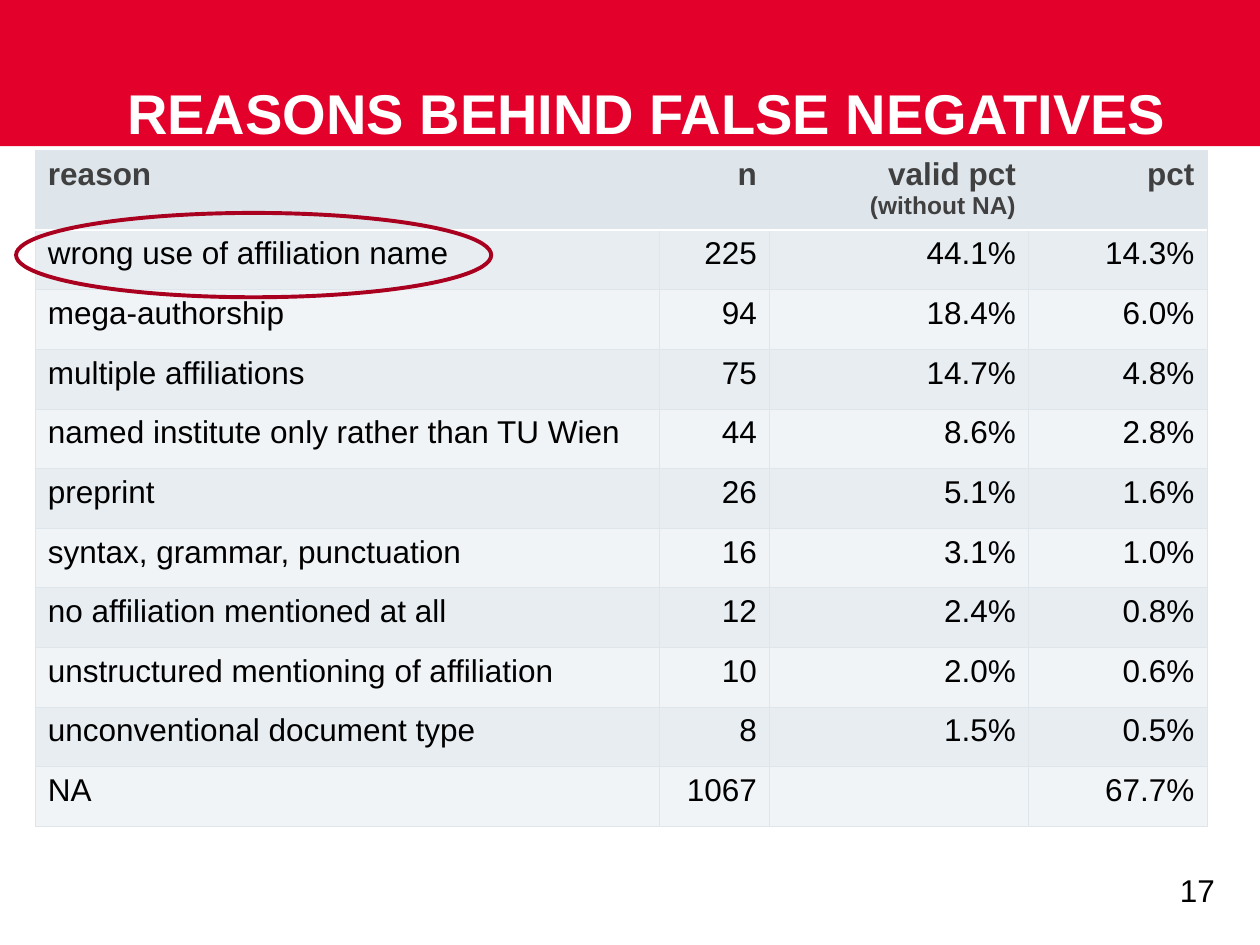
from pptx import Presentation
from pptx.util import Pt
from pptx.dml.color import RGBColor
from pptx.enum.shapes import MSO_SHAPE as SHAPE
from pptx.enum.text import MSO_ANCHOR as ANCHOR, PP_ALIGN as ALIGN
from pptx.oxml import parse_xml
from pptx.oxml.ns import nsdecls

# Content
TITLE = "REASONS BEHIND FALSE NEGATIVES"
PAGE = "17"
HEADER = ["reason", "n", ("valid pct", "(without NA)"), "pct"]
ROWS = [
    ("wrong use of affiliation name", "225", "44.1%", "14.3%"),
    ("mega-authorship", "94", "18.4%", "6.0%"),
    ("multiple affiliations", "75", "14.7%", "4.8%"),
    ("named institute only rather than TU Wien", "44", "8.6%", "2.8%"),
    ("preprint", "26", "5.1%", "1.6%"),
    ("syntax, grammar, punctuation", "16", "3.1%", "1.0%"),
    ("no affiliation mentioned at all", "12", "2.4%", "0.8%"),
    ("unstructured mentioning of affiliation", "10", "2.0%", "0.6%"),
    ("unconventional document type", "8", "1.5%", "0.5%"),
    ("NA", "1067", "", "67.7%"),
]
COLORS = {
    "band": "E3002B", "white": "FFFFFF", "black": "000000", "head_text": "404040",
    "head": "DEE6EC", "odd": "E8EDF1", "even": "F0F4F7", "mark": "AA0020",
}

# Layout, in points
WIDTH, HEIGHT = 720, 540
BAND_H = 83.5
COL_W = [356.5, 63, 148, 102]
HEAD_H, ROW_H = 44.6, 34.1
TABLE_X, TABLE_Y = 20.2, 85.8


def rgb(name):
    return RGBColor.from_string(COLORS[name])


def add_text(p, text, size, color, bold=False, align=ALIGN.LEFT):
    p.alignment = align
    r = p.add_run()
    r.text = text
    for key, value in dict(name="Arial", size=Pt(size), bold=bold).items():
        setattr(r.font, key, value)
    r.font.color.rgb = rgb(color)


def add_box(x, y, w, h, anchor=ANCHOR.TOP):
    tf = s.shapes.add_textbox(Pt(x), Pt(y), Pt(w), Pt(h)).text_frame
    tf.word_wrap = True
    tf.vertical_anchor = anchor
    return tf


def set_borders(cell, **borders):
    """Put the lines before the fill, as the schema asks."""
    tc_pr = cell._tc.get_or_add_tcPr()
    for i, side in enumerate("LRTB"):
        color, width = borders.get(side, ("head", 0.5))
        tc_pr.insert(i, parse_xml(
            f'<a:ln{side} {nsdecls("a")} w="{Pt(width)}"><a:solidFill>'
            f'<a:srgbClr val="{COLORS[color]}"/></a:solidFill></a:ln{side}>'))


prs = Presentation()
prs.slide_width, prs.slide_height = Pt(WIDTH), Pt(HEIGHT)
s = prs.slides.add_slide(prs.slide_layouts[6])

# Title band
sp = s.shapes.add_shape(SHAPE.RECTANGLE, 0, 0, Pt(WIDTH), Pt(BAND_H))
sp.shadow.inherit = False
sp.fill.solid()
sp.fill.fore_color.rgb = rgb("band")
sp.line.fill.background()

tf = add_box(72.7, 19.5, 628.5, 64, ANCHOR.BOTTOM)
for side in ("left", "right", "top", "bottom"):
    setattr(tf, f"margin_{side}", 0)
p = tf.paragraphs[0]
p.line_spacing = Pt(32)
add_text(p, TITLE, 32, "white", bold=True)

# Page number
add_text(add_box(617.8, 494, 83.5, 46).paragraphs[0], PAGE, 18, "black", align=ALIGN.RIGHT)

# Table
grid = [HEADER, *ROWS]
table = s.shapes.add_table(len(grid), len(COL_W), Pt(TABLE_X), Pt(TABLE_Y), Pt(sum(COL_W)),
                           Pt(HEAD_H + ROW_H * len(ROWS))).table
table.first_row = table.horz_banding = False
for col, w in zip(table.columns, COL_W):
    col.width = Pt(w)
for i, values in enumerate(grid):
    is_head = i == 0
    table.rows[i].height = Pt(HEAD_H if is_head else ROW_H)
    fill = "head" if is_head else "odd" if i % 2 else "even"
    for j, value in enumerate(values):
        cell = table.cell(i, j)
        cell.fill.solid()
        cell.fill.fore_color.rgb = rgb(fill)
        divider = ("white", 1)
        set_borders(cell, **({"B": divider} if is_head else {"T": divider} if i == 1 else {}))
        lines = value if isinstance(value, tuple) else (value,)
        for k, line in enumerate(lines):
            p = cell.text_frame.add_paragraph() if k else cell.text_frame.paragraphs[0]
            add_text(p, line, 14 if k else 18, "head_text" if is_head else "black",
                     is_head, ALIGN.RIGHT if j else ALIGN.LEFT)

# Ellipse around the main reason
sp = s.shapes.add_shape(SHAPE.OVAL, Pt(9.2), Pt(121.7), Pt(271.5), Pt(48.2))
sp.shadow.inherit = False
sp.fill.background()
sp.line.color.rgb = rgb("mark")
sp.line.width = Pt(2.25)

prs.save("out.pptx")
